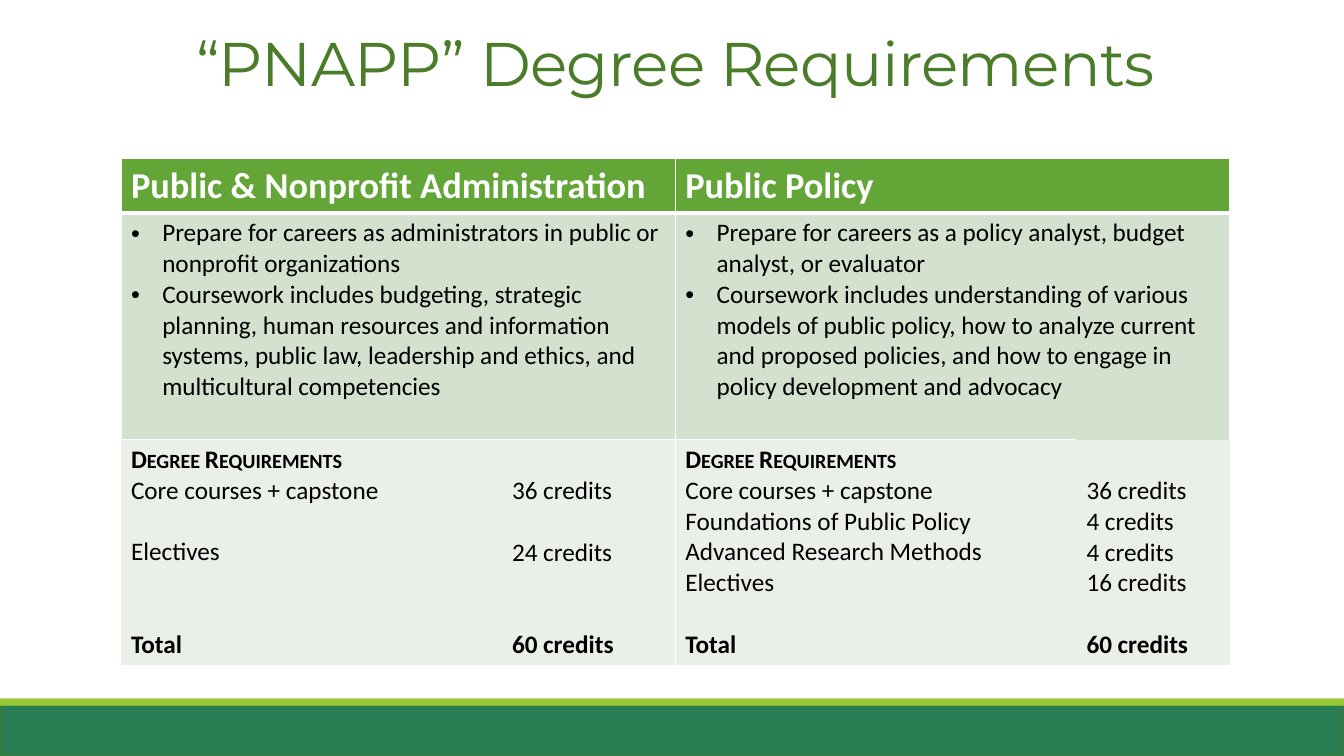
from dataclasses import dataclass

from lxml import etree
from pptx import Presentation
from pptx.dml.color import RGBColor
from pptx.enum.shapes import MSO_SHAPE
from pptx.enum.text import MSO_ANCHOR, MSO_AUTO_SIZE, PP_ALIGN
from pptx.oxml.ns import qn
from pptx.util import Emu, Inches, Pt

RECTANGLE = MSO_SHAPE.RECTANGLE
TOP = MSO_ANCHOR.TOP
CENTER = PP_ALIGN.CENTER
NO_AUTOFIT = MSO_AUTO_SIZE.NONE

SLIDE_WIDTH, SLIDE_HEIGHT = Inches(13.333), Inches(7.5)
GRID_COLUMNS, GRID_ROWS = 40, 30


@dataclass(frozen=True)
class Theme:
    title_font: str = "Montserrat"
    body_font: str = "Calibri"
    title_size: float = 44
    heading_size: float = 26
    body_size: float = 18
    body_line: float = 21.97
    title: str = "4A7C29"
    heading: str = "FFFFFF"
    text: str = "000000"
    border: str = "FFFFFF"
    heading_fill: str = "63A537"
    profile_fill: str = "D3E1CE"
    credits_fill: str = "EAF0E8"
    band: str = "297D53"
    stripe: str = "99CB38"


@dataclass(frozen=True)
class Band:
    row: float
    height: float
    fill: str
    outline: str = ""


@dataclass(frozen=True)
class Entry:
    label: str
    credits: str
    lines_above: int = 0


@dataclass(frozen=True)
class Track:
    name: str
    goals: tuple[str, ...]
    entries: tuple[Entry, ...]
    label_width: float
    credits_width: float


THEME = Theme()
BANDS = (
    Band(28, 2, THEME.band, THEME.title),
    Band(27.72, 0.28, THEME.stripe),
)
TRACKS = (
    Track(
        "Public & Nonprofit Administration",
        (
            "Prepare for careers as administrators in public or nonprofit organizations",
            "Coursework includes budgeting, strategic planning, human resources and "
            "information systems, public law, leadership and ethics, and "
            "multicultural competencies",
        ),
        (
            Entry("Core courses + capstone", "36 credits"),
            Entry("Electives", "24 credits", 1),
            Entry("Total", "60 credits", 2),
        ),
        11.34,
        5.16,
    ),
    Track(
        "Public Policy",
        (
            "Prepare for careers as a policy analyst, budget analyst, or evaluator",
            "Coursework includes understanding of various models of public policy, "
            "how to analyze current and proposed policies, and how to engage in "
            "policy development and advocacy",
        ),
        (
            Entry("Core courses + capstone", "36 credits"),
            Entry("Foundations of Public Policy", "4 credits"),
            Entry("Advanced Research Methods", "4 credits"),
            Entry("Electives", "16 credits"),
            Entry("Total", "60 credits", 1),
        ),
        11.94,
        4.56,
    ),
)
ROW_HEIGHTS = (2.12, 9, 8.96)


def across(columns: float) -> Emu:
    return Emu(round(SLIDE_WIDTH * columns / GRID_COLUMNS))


def down(rows: float) -> Emu:
    return Emu(round(SLIDE_HEIGHT * rows / GRID_ROWS))


def format_span(span, size: float, color: str, font: str, bold: bool = False) -> None:
    span.font.size = Pt(size)
    span.font.name = font
    span.font.bold = bold
    span.font.color.rgb = RGBColor.from_string(color)


def draw_band(slide, band: Band) -> None:
    box = slide.shapes.add_shape(RECTANGLE, 0, down(band.row), SLIDE_WIDTH, down(band.height))
    box.shadow.inherit = False
    box.fill.solid()
    box.fill.fore_color.rgb = RGBColor.from_string(band.fill)
    if band.outline:
        box.line.color.rgb = RGBColor.from_string(band.outline)
        box.line.width = Pt(1.25)
    else:
        box.line.fill.background()


def draw_title(slide, text: str) -> None:
    box = slide.shapes.title
    box.left, box.top, box.width, box.height = across(3.6), down(1.24), across(33), down(6.36)
    frame = box.text_frame
    frame.text = text
    frame.auto_size = NO_AUTOFIT
    frame.vertical_anchor = TOP
    para = frame.paragraphs[0]
    para.alignment = CENTER
    para.line_spacing = 0.85
    span = para.runs[0]
    format_span(span, THEME.title_size, THEME.title, THEME.title_font)
    span._r.get_or_add_rPr().set("spc", "-50")


def style_cell(cell, fill: str, borders: dict[str, float]) -> None:
    properties = cell._tc.get_or_add_tcPr()
    for side in "LRTB":
        edge = etree.SubElement(properties, qn(f"a:ln{side}"))
        if side in borders:
            edge.set("w", str(Pt(borders[side])))
            paint = etree.SubElement(edge, qn("a:solidFill"))
            etree.SubElement(paint, qn("a:srgbClr")).set("val", THEME.border)
        else:
            etree.SubElement(edge, qn("a:noFill"))
    cell.fill.solid()
    cell.fill.fore_color.rgb = RGBColor.from_string(fill)


def write_lines(cell, lines: list[str], size: float, color: str, bold_lines: set[int]) -> list:
    cell.text_frame.text = "\n".join(lines)
    paras = list(cell.text_frame.paragraphs)
    for index, para in enumerate(paras):
        format_span(para.runs[0], size, color, THEME.body_font, index in bold_lines)
    return paras


def add_bullet(para) -> None:
    properties = para._p.get_or_add_pPr()
    properties.set("marL", str(Inches(0.31)))
    properties.set("indent", str(-Inches(0.31)))
    etree.SubElement(properties, qn("a:buFont")).set("typeface", "Arial")
    etree.SubElement(properties, qn("a:buChar")).set("char", "•")


def fill_track(table, track: Track, column: int) -> None:
    heading, profile, labels = (table.cell(row, column) for row in range(3))
    heading_end, profile_end, amounts = (table.cell(row, column + 1) for row in range(3))
    heading.merge(heading_end)
    profile.merge(profile_end)
    for cell in (heading, heading_end):
        style_cell(cell, THEME.heading_fill, {"L": 1, "T": 1, "R": 1, "B": 3})
    style_cell(profile, THEME.profile_fill, {"L": 1, "T": 3, "R": 1, "B": 1})
    style_cell(profile_end, THEME.profile_fill, {"T": 3, "R": 1})
    is_first = column == 0
    style_cell(labels, THEME.credits_fill, {"T": 1} if is_first else {"L": 1, "T": 1})
    style_cell(amounts, THEME.credits_fill, {"T": 1, "R": 1} if is_first else {})

    write_lines(heading, [track.name], THEME.heading_size, THEME.heading, {0})
    for para in write_lines(profile, list(track.goals), THEME.body_size, THEME.text, set()):
        add_bullet(para)

    count = len(track.entries)
    names = ["Degree Requirements"] + [entry.label for entry in track.entries]
    credits = [entry.credits for entry in track.entries]
    label_paras = write_lines(labels, names, THEME.body_size, THEME.text, {0, count})
    amount_paras = write_lines(amounts, credits, THEME.body_size, THEME.text, {count - 1})
    label_paras[0].runs[0]._r.get_or_add_rPr().set("cap", "small")
    amounts.margin_top = Inches(0.05) + Pt(THEME.body_line)
    for entry, label, amount in zip(track.entries, label_paras[1:], amount_paras):
        if entry.lines_above:
            for para in (label, amount):
                para.space_before = Pt(entry.lines_above * THEME.body_line)


def draw_table(slide) -> None:
    frame = slide.shapes.add_table(
        len(ROW_HEIGHTS), 2 * len(TRACKS),
        across(3.6), down(6.28), across(33), down(sum(ROW_HEIGHTS)),
    )
    table = frame.table
    table.first_row = table.horz_banding = False
    for row, height in zip(table.rows, ROW_HEIGHTS):
        row.height = down(height)
    for index, track in enumerate(TRACKS):
        table.columns[2 * index].width = across(track.label_width)
        table.columns[2 * index + 1].width = across(track.credits_width)
        fill_track(table, track, 2 * index)


def main() -> None:
    deck = Presentation()
    deck.slide_width, deck.slide_height = SLIDE_WIDTH, SLIDE_HEIGHT
    slide = deck.slides.add_slide(deck.slide_layouts[5])
    for band in BANDS:
        draw_band(slide, band)
    draw_title(slide, "“PNAPP” Degree Requirements")
    draw_table(slide)
    deck.save("out.pptx")


if __name__ == "__main__":
    main()
